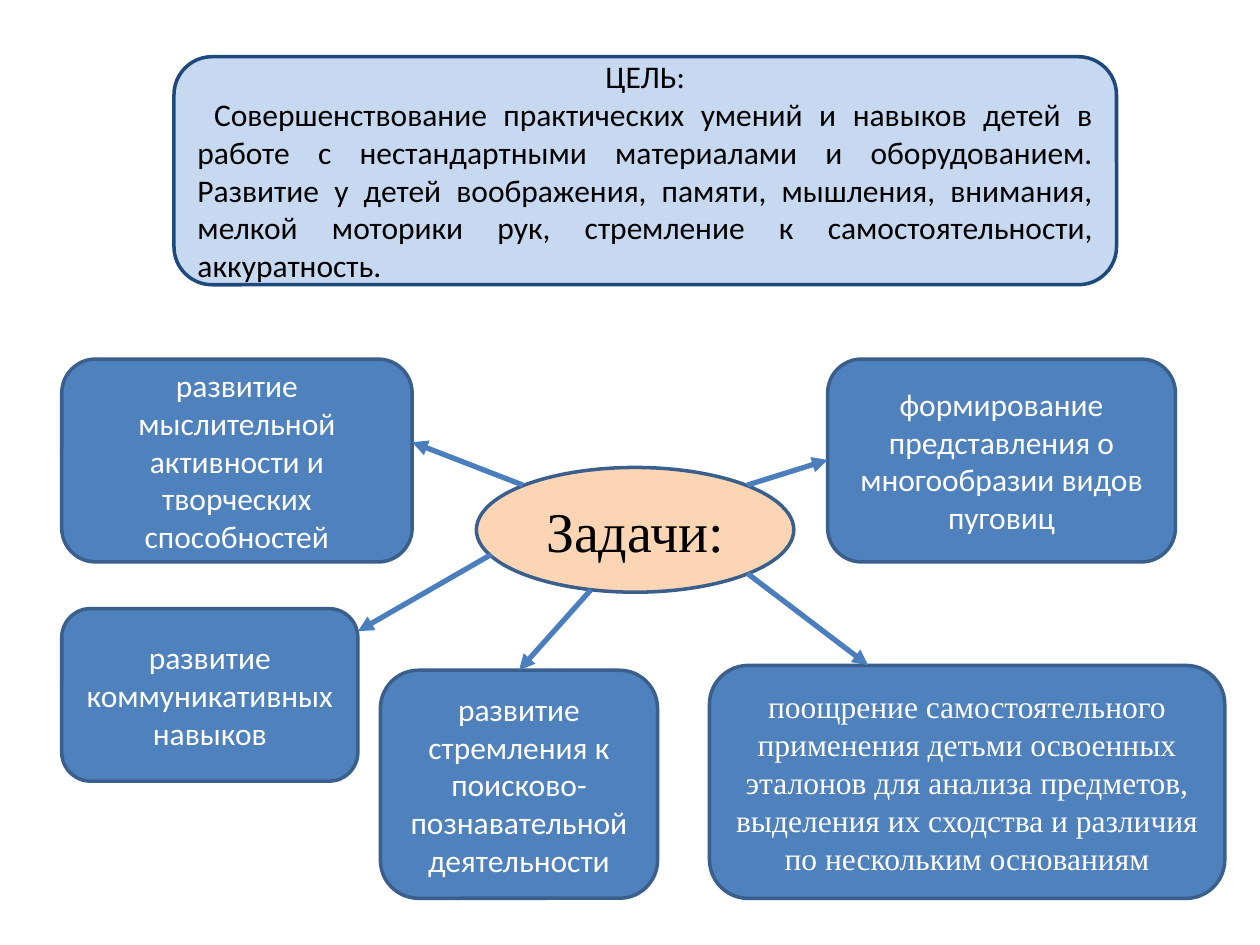
"""Build a slide with a goal panel above a hub of five tasks."""
from dataclasses import dataclass

import lxml.etree
import pptx
import pptx.dml.color
import pptx.enum.dml
import pptx.enum.shapes
import pptx.enum.text
import pptx.oxml.ns
import pptx.util

Pt = pptx.util.Pt
SHAPE = pptx.enum.shapes.MSO_SHAPE
ALIGN = pptx.enum.text.PP_ALIGN
COLORS = {
    "goal": "C6D9F1",
    "goal_edge": "1F497D",
    "hub": "FCD5B5",
    "task": "4F81BD",
    "edge": "3A5F8C",
    "arrow": "4B7EBC",
    "dark": "000000",
    "light": "FFFFFF",
}


@dataclass(frozen=True)
class Box:
    x: float
    y: float
    w: float
    h: float


@dataclass(frozen=True)
class Task:
    text: str
    box: Box
    start: tuple[float, float]
    end: tuple[float, float]
    font: str = "Calibri"


GOAL = Box(99.4, 32.4, 538.6, 130.3)
HUB = Box(272.2, 267.1, 181.4, 71.3)
TASKS = [
    Task("развитие мыслительной активности и творческих способностей",
         Box(35.3, 205.2, 200.2, 115.9), (298.8, 277.2), (235.5, 252.7)),
    Task("развитие коммуникативных навыков",
         Box(35.3, 347.8, 169.2, 98.6), (280.8, 316.8), (204.5, 360.7)),
    Task("развитие стремления к поисково-познавательной деятельности",
         Box(217.4, 383, 158.4, 130.3), (337.7, 337), (296.6, 383)),
    Task("поощрение самостоятельного применения детьми освоенных эталонов "
         "для анализа предметов, выделения их сходства и различия "
         "по нескольким основаниям",
         Box(405.4, 380.2, 294.5, 133.2), (427, 327.6), (496.1, 380.2),
         "Times New Roman"),
    Task("формирование представления о многообразии видов пуговиц",
         Box(473, 205.2, 198.7, 115.9), (427, 277.2), (473, 262.8)),
]


def rgb(name: str) -> pptx.dml.color.RGBColor:
    return pptx.dml.color.RGBColor.from_string(COLORS[name])


def add_panel(s, box: Box, fill: str, edge: str = "edge",
              kind=SHAPE.ROUNDED_RECTANGLE):
    sp = s.shapes.add_shape(kind, Pt(box.x), Pt(box.y), Pt(box.w), Pt(box.h))
    sp.shadow.inherit = False
    sp.fill.solid()
    sp.fill.fore_color.rgb = rgb(fill)
    sp.line.color.rgb = rgb(edge)
    sp.line.width = Pt(2)
    tf = sp.text_frame
    tf.word_wrap = True
    tf.vertical_anchor = pptx.enum.text.MSO_ANCHOR.MIDDLE
    return tf


def write(p, text: str, *, font: str = "Calibri", size: float = 18,
          color: str = "light", align=ALIGN.CENTER) -> None:
    p.alignment = align
    r = p.add_run()
    r.text = text
    r.font.name = font
    r.font.size = Pt(size)
    r.font.color.rgb = rgb(color)


def add_arrow(s, start: tuple[float, float], end: tuple[float, float]) -> None:
    c = s.shapes.add_connector(pptx.enum.shapes.MSO_CONNECTOR.STRAIGHT,
                               *(Pt(v) for v in start + end))
    c.line.color.rgb = rgb("arrow")
    c.line.width = Pt(3)
    qn = pptx.oxml.ns.qn
    lxml.etree.SubElement(c.line._get_or_add_ln(), qn("a:tailEnd"), type="triangle")
    lxml.etree.SubElement(c._element.spPr, qn("a:effectLst"))


def main() -> None:
    prs = pptx.Presentation()
    prs.slide_width, prs.slide_height = Pt(720), Pt(540)
    s = prs.slides.add_slide(prs.slide_layouts[6])

    tf = add_panel(s, GOAL, "goal", "goal_edge")
    write(tf.paragraphs[0], "ЦЕЛЬ:", color="dark")
    write(tf.add_paragraph(),
          " Совершенствование практических умений и навыков детей в работе "
          "с нестандартными материалами и оборудованием. Развитие у детей "
          "воображения, памяти, мышления, внимания, мелкой моторики рук, "
          "стремление к самостоятельности, аккуратность.",
          color="dark", align=ALIGN.JUSTIFY)

    tf = add_panel(s, HUB, "hub", kind=SHAPE.OVAL)
    write(tf.paragraphs[0], "Задачи:", font="Times New Roman", size=32, color="dark")

    for task in TASKS:
        tf = add_panel(s, task.box, "task")
        write(tf.paragraphs[0], task.text, font=task.font)
    for task in TASKS:
        add_arrow(s, task.start, task.end)

    prs.save("out.pptx")


if __name__ == "__main__":
    main()
